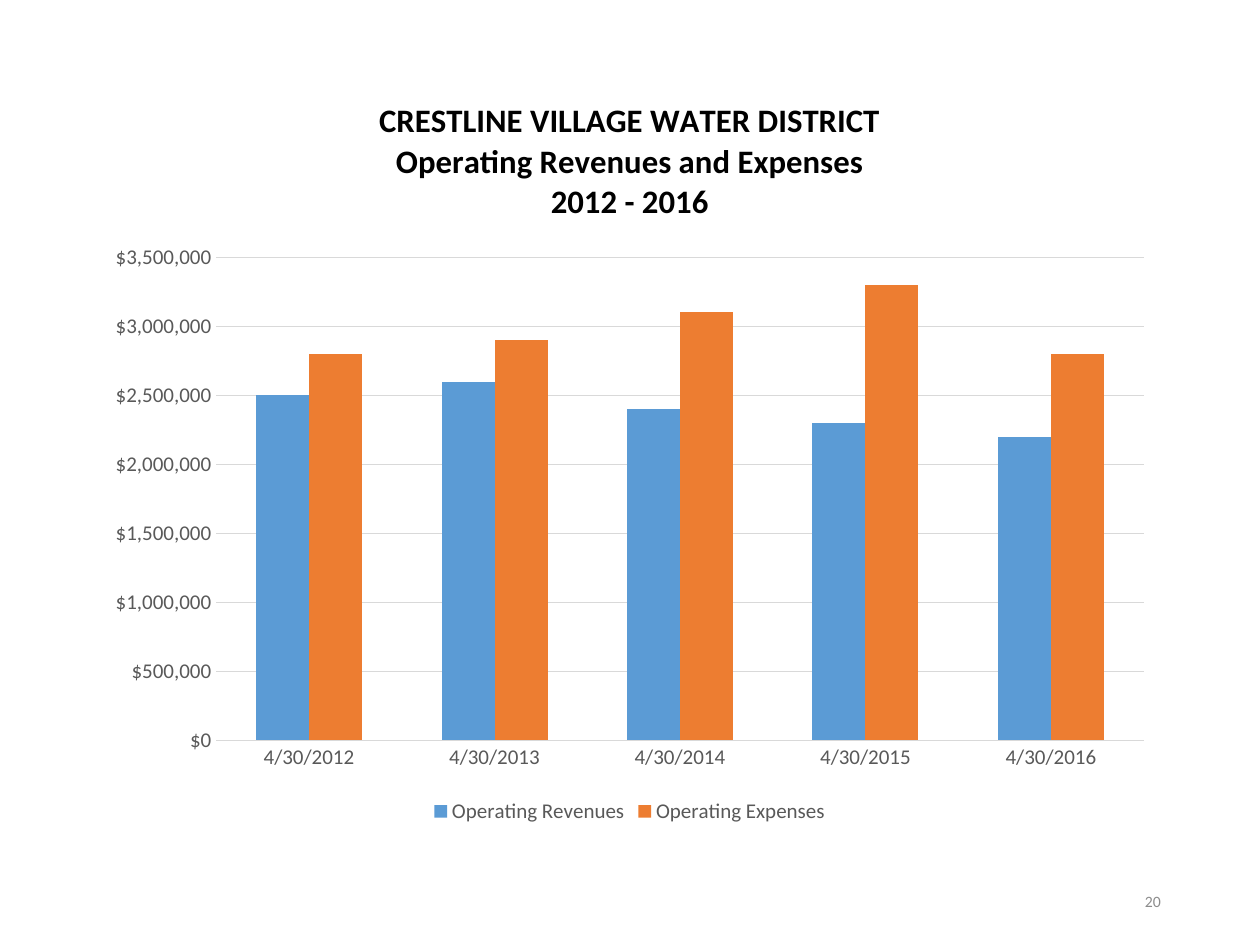
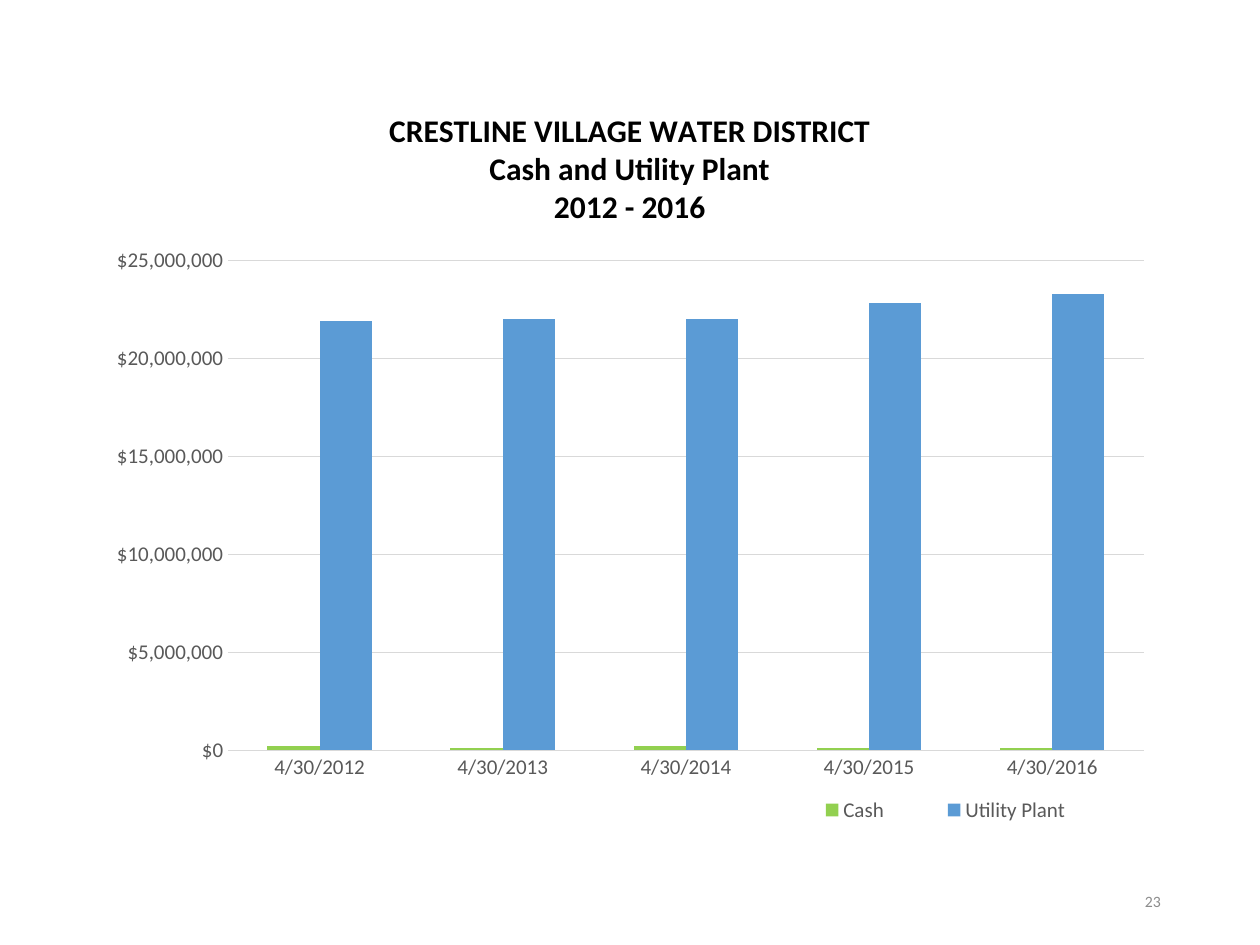
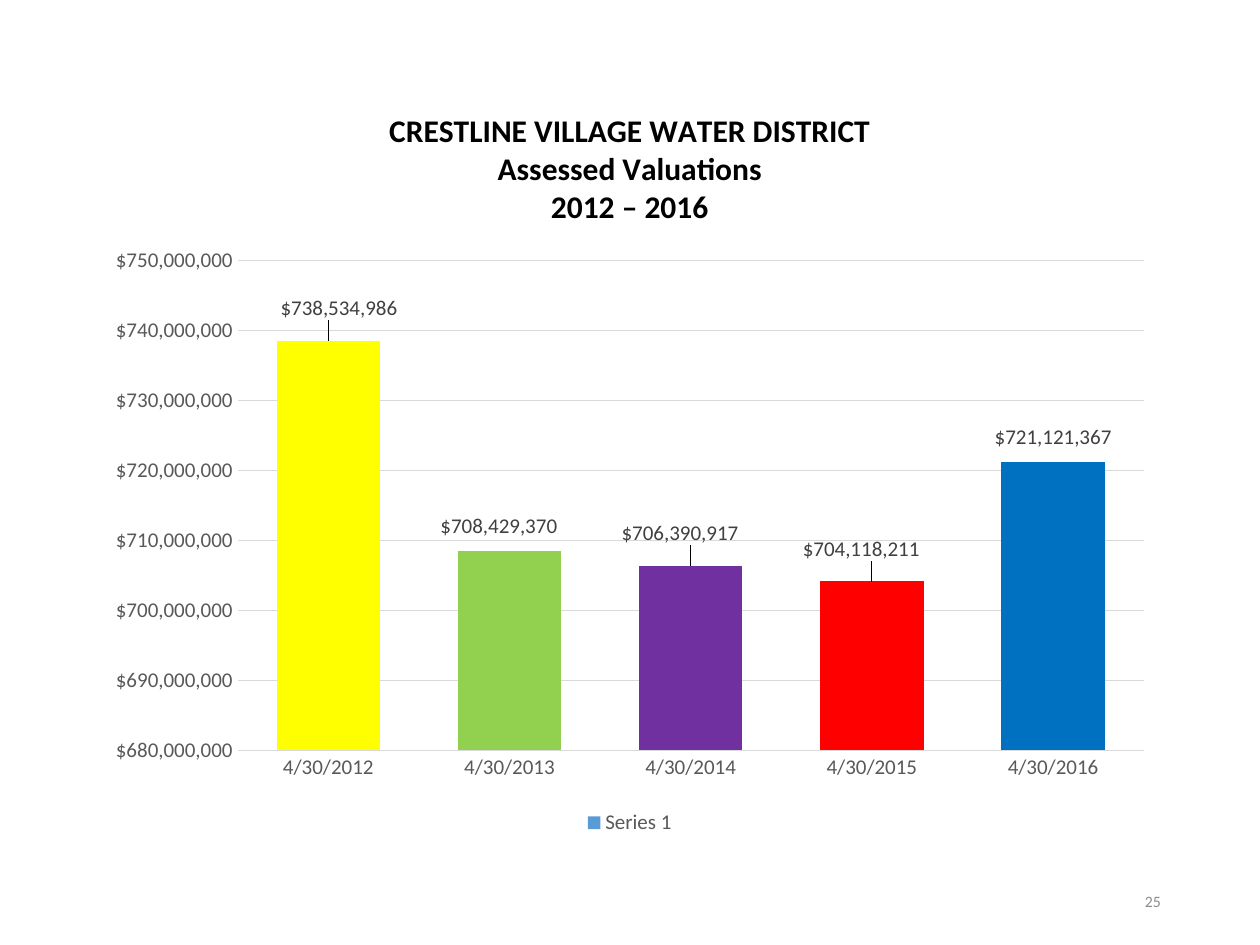
from dataclasses import dataclass

from lxml.etree import SubElement
from pptx import Presentation
from pptx.chart.data import CategoryChartData
from pptx.dml.color import RGBColor
from pptx.enum.chart import XL_CHART_TYPE as ChartType
from pptx.enum.chart import XL_LABEL_POSITION as LabelPosition
from pptx.enum.chart import XL_LEGEND_POSITION as LegendPosition
from pptx.enum.chart import XL_TICK_MARK as TickMark
from pptx.enum.text import MSO_ANCHOR, PP_ALIGN
from pptx.oxml.ns import qn
from pptx.util import Cm, Pt

BLACK = RGBColor(0x00, 0x00, 0x00)
LABEL_GRAY = RGBColor(0x40, 0x40, 0x40)
AXIS_GRAY = RGBColor(0x59, 0x59, 0x59)
NUMBER_GRAY = RGBColor(0x8C, 0x8C, 0x8C)
GRID_GRAY = RGBColor(0xD9, 0xD9, 0xD9)
BLUE = RGBColor(0x5B, 0x9B, 0xD5)
ORANGE = RGBColor(0xED, 0x7D, 0x31)
GREEN = RGBColor(0x92, 0xD0, 0x50)
YELLOW = RGBColor(0xFF, 0xFF, 0x00)
PURPLE = RGBColor(0x70, 0x30, 0xA0)
RED = RGBColor(0xFF, 0x00, 0x00)
DEEP_BLUE = RGBColor(0x00, 0x70, 0xC0)

FONT = "Calibri"
DISTRICT = "CRESTLINE VILLAGE WATER DISTRICT"
DOLLARS = '"$"#,##0'
YEAR_ENDS = [f"4/30/{year}" for year in range(2012, 2017)]
PLOT_RIGHT = 0.98


@dataclass
class Scale:
    low: int
    high: int
    step: int


@dataclass
class Frame:
    top: float
    plot_left: float
    plot_top: float
    plot_height: float


def style_font(font, size, color, bold=False):
    font.name = FONT
    font.size = Pt(size)
    font.bold = bold
    font.color.rgb = color


def set_layout(element, index, **settings):
    for old in element.findall(qn("c:layout")):
        element.remove(old)
    layout = SubElement(element, qn("c:layout"))
    manual = SubElement(layout, qn("c:manualLayout"))
    for name, value in settings.items():
        SubElement(manual, qn(f"c:{name}")).set("val", str(value))
    element.insert(index, layout)


def add_title(chart, subject, years, size):
    frame = chart.chart_title.text_frame
    frame.text = "\n".join([DISTRICT, subject, years])
    for para in frame.paragraphs:
        for span in para.runs:
            style_font(span.font, size, BLACK, bold=True)


def style_axes(chart, scale):
    for axis in (chart.category_axis, chart.value_axis):
        axis.major_tick_mark = axis.minor_tick_mark = TickMark.NONE
        axis.format.line.fill.background()
        style_font(axis.tick_labels.font, 12, AXIS_GRAY)
    values = chart.value_axis
    values.minimum_scale = scale.low
    values.maximum_scale = scale.high
    values.major_unit = scale.step
    values.tick_labels.number_format = DOLLARS
    values.tick_labels.number_format_is_linked = False
    grid = values.major_gridlines.format.line
    grid.color.rgb = GRID_GRAY
    grid.width = Pt(0.75)


def add_legend(chart):
    chart.has_legend = True
    chart.legend.position = LegendPosition.BOTTOM
    chart.legend.include_in_layout = False
    style_font(chart.legend.font, 12, AXIS_GRAY)


def add_columns(page, frame, scale, series, gap=150):
    data = CategoryChartData(number_format=DOLLARS)
    data.categories = YEAR_ENDS
    for name, values, _ in series:
        data.add_series(name, values)
    chart = page.shapes.add_chart(
        ChartType.COLUMN_CLUSTERED, Cm(1.9), Cm(frame.top), Cm(21.59), Cm(15.24), data
    ).chart
    style_font(chart.font, 10, BLACK)
    plot = chart.plots[0]
    plot.gap_width = gap
    plot.overlap = 0
    plot.vary_by_categories = False
    for columns, (_, _, color) in zip(plot.series, series):
        columns.format.fill.solid()
        columns.format.fill.fore_color.rgb = color
    style_axes(chart, scale)
    add_legend(chart)
    plot_area = chart._chartSpace.chart.plotArea
    set_layout(
        plot_area, 0, layoutTarget="inner", xMode="edge", yMode="edge",
        x=frame.plot_left, y=frame.plot_top,
        w=round(PLOT_RIGHT - frame.plot_left, 3), h=frame.plot_height,
    )
    return chart


def color_points(columns, colors, offsets):
    labels = columns.data_labels
    labels.show_value = True
    labels.number_format = DOLLARS
    labels.number_format_is_linked = False
    style_font(labels.font, 12, LABEL_GRAY)
    for index, (color, (across, down)) in enumerate(zip(colors, offsets)):
        point = columns.points[index]
        point.format.fill.solid()
        point.format.fill.fore_color.rgb = color
        label = point.data_label
        style_font(label.font, 12, LABEL_GRAY)
        label.position = LabelPosition.OUTSIDE_END
        element = labels._element.findall(qn("c:dLbl"))[index]
        set_layout(element, 1, x=across, y=down)


def add_page_number(page, number):
    box = page.shapes.add_textbox(Cm(17.93), Cm(17.65), Cm(5.72), Cm(1.02))
    frame = box.text_frame
    frame.word_wrap = True
    frame.vertical_anchor = MSO_ANCHOR.MIDDLE
    frame.text = str(number)
    para = frame.paragraphs[0]
    para.alignment = PP_ALIGN.RIGHT
    style_font(para.runs[0].font, 9, NUMBER_GRAY)


def add_page(deck, number):
    page = deck.slides.add_slide(deck.slide_layouts[6])
    add_page_number(page, number)
    return page


def add_operations(deck):
    chart = add_columns(
        add_page(deck, 20),
        Frame(1.47, 0.114, 0.244, 0.639),
        Scale(0, 3500000, 500000),
        [
            ("Operating Revenues", [2500000, 2600000, 2400000, 2300000, 2200000], BLUE),
            ("Operating Expenses", [2800000, 2900000, 3100000, 3300000, 2800000], ORANGE),
        ],
    )
    add_title(chart, "Operating Revenues and Expenses", "2012 - 2016", 18.7)


def add_cash_and_plant(deck):
    chart = add_columns(
        add_page(deck, 23),
        Frame(1.7, 0.125, 0.233, 0.648),
        Scale(0, 25000000, 5000000),
        [
            ("Cash", [200000, 100000, 200000, 100000, 100000], GREEN),
            ("Utility Plant", [21900000, 22000000, 22000000, 22800000, 23300000], BLUE),
        ],
    )
    add_title(chart, "Cash and Utility Plant", "2012 - 2016", 18)
    set_layout(
        chart.legend._element, 1, xMode="edge", yMode="edge",
        x=0.63, y=0.93, w=0.33, h=0.06,
    )


def add_valuations(deck):
    chart = add_columns(
        add_page(deck, 25),
        Frame(1.7, 0.134, 0.233, 0.648),
        Scale(680000000, 750000000, 10000000),
        [("Series 1", [738534986, 708429370, 706390917, 704118211, 721121367], BLUE)],
        gap=75,
    )
    add_title(chart, "Assessed Valuations", "2012 – 2016", 18)
    color_points(
        chart.plots[0].series[0],
        [YELLOW, GREEN, PURPLE, RED, DEEP_BLUE],
        [(0.01, -0.02), (-0.01, -0.01), (-0.01, -0.02), (-0.01, -0.02), (0, -0.01)],
    )


def main():
    deck = Presentation()
    deck.slide_width = Cm(25.4)
    deck.slide_height = Cm(19.05)
    add_operations(deck)
    add_cash_and_plant(deck)
    add_valuations(deck)
    deck.save("out.pptx")


if __name__ == "__main__":
    main()
